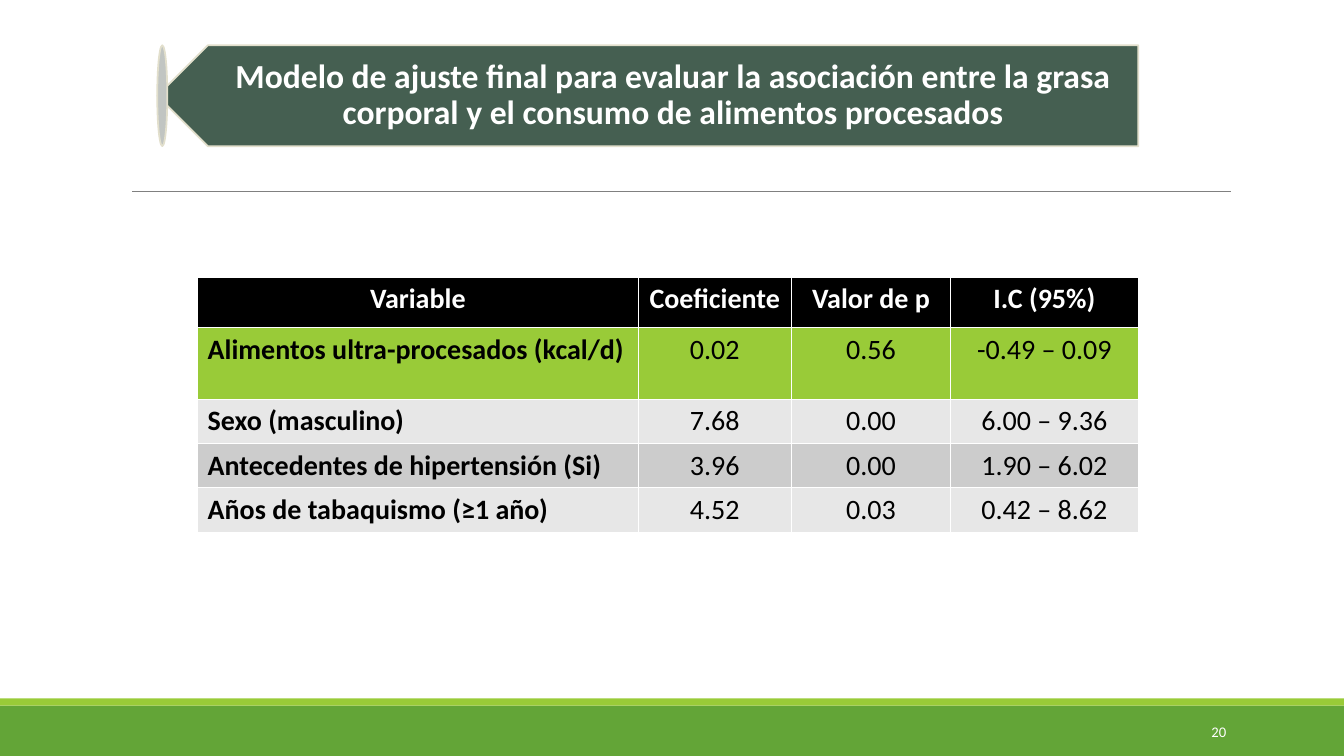
from pptx import Presentation
from pptx.dml.color import RGBColor
from pptx.enum import shapes, text
from pptx.oxml import xmlchemy
from pptx.util import Inches, Pt

WHITE = RGBColor(0xFF, 0xFF, 0xFF)
BLACK = RGBColor(0x00, 0x00, 0x00)
GREEN = RGBColor(0x63, 0xA5, 0x37)
LIME = RGBColor(0x99, 0xCB, 0x38)
DARK_GREEN = RGBColor(0x45, 0x5F, 0x51)
SILVER = RGBColor(0xC1, 0xC5, 0xC2)
CREAM = RGBColor(0xE2, 0xDF, 0xCC)
GRAY = RGBColor(0x80, 0x80, 0x80)
LIGHT_BAND = RGBColor(0xE7, 0xE7, 0xE7)
DARK_BAND = RGBColor(0xCC, 0xCC, 0xCC)

prs = Presentation()
prs.slide_width, prs.slide_height = Inches(13.33), Inches(7.5)
slide = prs.slides.add_slide(prs.slide_layouts[6])


def add_block(kind, left, top, width, height, fill, outline=None):
    block = slide.shapes.add_shape(
        kind, Inches(left), Inches(top), Inches(width), Inches(height))
    block.shadow.inherit = False
    block.fill.solid()
    block.fill.fore_color.rgb = fill
    if outline is None:
        block.line.fill.background()
    else:
        block.line.color.rgb = outline
        block.line.width = Pt(1.25)
    return block


def write(frame, words, size, color, bold, align):
    frame.text = words
    paragraph = frame.paragraphs[0]
    paragraph.alignment = align
    font = paragraph.runs[0].font
    font.name, font.size, font.bold = "Calibri", Pt(size), bold
    font.color.rgb = color


# Footer bands
kinds = shapes.MSO_SHAPE
add_block(kinds.RECTANGLE, 0, 7, 13.33, 0.5, GREEN)
add_block(kinds.RECTANGLE, 0, 6.93, 13.33, 0.07, LIME)

# Rule under the title
rule = slide.shapes.add_connector(
    shapes.MSO_CONNECTOR.STRAIGHT, Inches(1.31), Inches(1.9), Inches(12.21), Inches(1.9))
rule.line.color.rgb = GRAY
rule.line.width = Pt(0.5)
rule._element.spPr.append(xmlchemy.OxmlElement("a:effectLst"))

# Title banner pointing left, with an ellipse at its tip
banner = add_block(kinds.PENTAGON, 1.56, 0.45, 9.73, 1, DARK_GREEN, CREAM)
banner.rotation = 180
title = slide.shapes.add_textbox(
    Inches(1.81), Inches(0.45), Inches(9.48), Inches(1)).text_frame
title.word_wrap = True
title.vertical_anchor = text.MSO_ANCHOR.MIDDLE
title.margin_left, title.margin_right = Inches(0.44), Inches(0.19)
title.margin_top = title.margin_bottom = Inches(0.1)
write(title, "Modelo de ajuste final para evaluar la asociación entre la grasa "
      "corporal y el consumo de alimentos procesados",
      24, WHITE, True, text.PP_ALIGN.CENTER)
title.paragraphs[0].line_spacing = 0.9
add_block(kinds.OVAL, 1.56, 0.45, 0.1, 1, SILVER, CREAM)

# Table of the adjusted model: row height, fill, values
model_rows = [
    (0.5, BLACK, ["Variable", "Coeficiente", "Valor de p", "I.C (95%)"]),
    (0.71, LIME, ["Alimentos ultra-procesados (kcal/d)", "0.02", "0.56", "-0.49 – 0.09"]),
    (0.44, LIGHT_BAND, ["Sexo (masculino)", "7.68", "0.00", "6.00 – 9.36"]),
    (0.44, DARK_BAND, ["Antecedentes de hipertensión (Si)", "3.96", "0.00", "1.90 – 6.02"]),
    (0.44, LIGHT_BAND, ["Años de tabaquismo (≥1 año)", "4.52", "0.03", "0.42 – 8.62"]),
]
column_widths = [4.37, 1.52, 1.58, 1.86]
model = slide.shapes.add_table(
    len(model_rows), len(column_widths),
    Inches(1.96), Inches(2.75), Inches(9.33), Inches(2.53)).table
for column, width in zip(model.columns, column_widths):
    column.width = Inches(width)
for r, (height, fill, values) in enumerate(model_rows):
    model.rows[r].height = Inches(height)
    for c, value in enumerate(values):
        cell = model.cell(r, c)
        cell.fill.solid()
        cell.fill.fore_color.rgb = fill
        header, label = r == 0, c == 0
        align = text.PP_ALIGN.LEFT if label and not header else text.PP_ALIGN.CENTER
        write(cell.text_frame, value, 20, WHITE if header else BLACK,
              header or label, align)

# Page number
page = slide.shapes.add_textbox(
    Inches(10.83), Inches(7.06), Inches(1.43), Inches(0.4)).text_frame
page.word_wrap = True
page.vertical_anchor = text.MSO_ANCHOR.MIDDLE
write(page, "20", 10.5, WHITE, False, text.PP_ALIGN.RIGHT)

prs.save("out.pptx")
